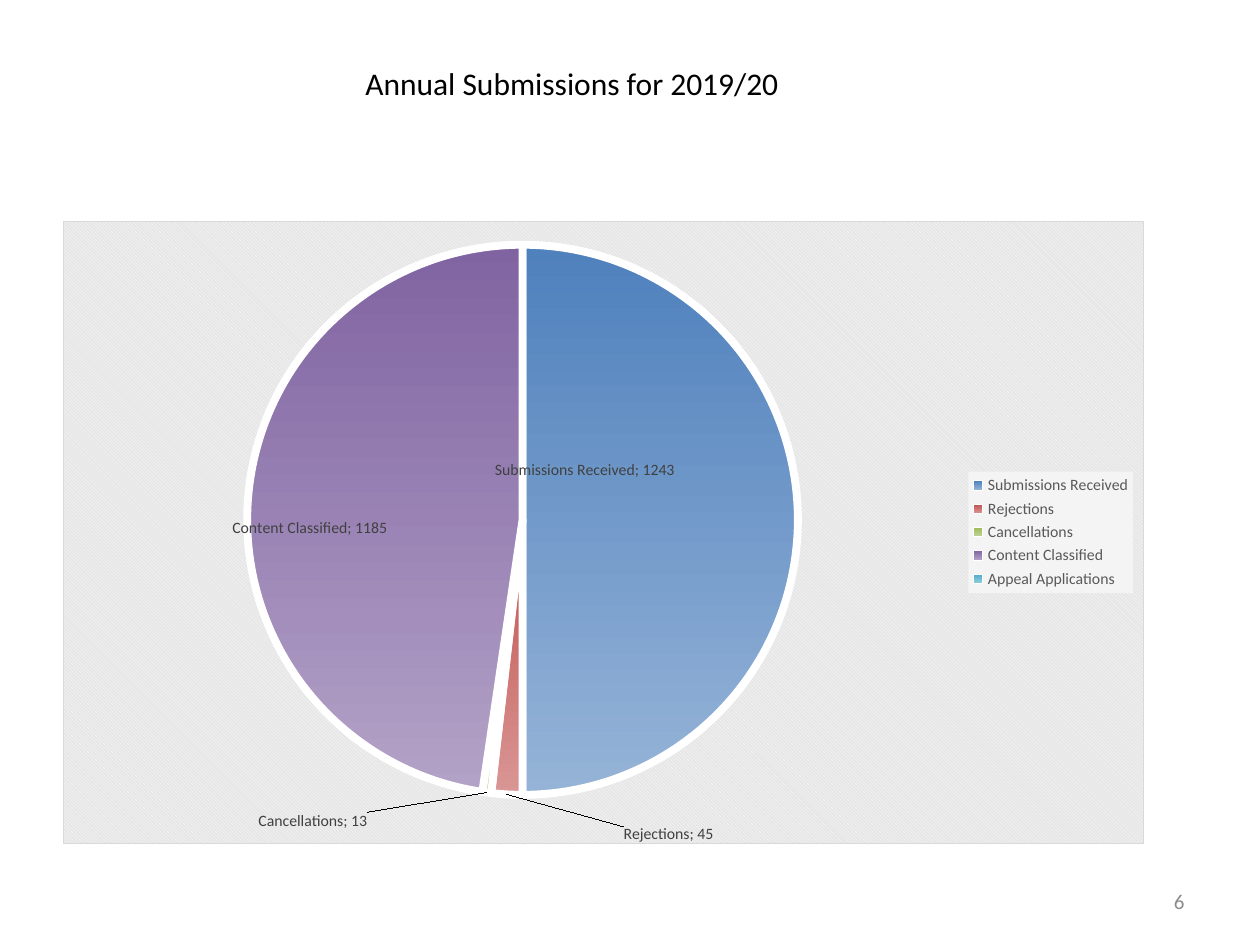
import pptx
import pptx.chart.data
import pptx.dml.color
import pptx.enum.chart
import pptx.enum.text
import pptx.oxml
import pptx.oxml.ns
import pptx.util

Inches = pptx.util.Inches
Pt = pptx.util.Pt
RGBColor = pptx.dml.color.RGBColor
Place = pptx.enum.chart.XL_LABEL_POSITION
Align = pptx.enum.text.PP_ALIGN

FONT = "Calibri"
BLACK = RGBColor(0x00, 0x00, 0x00)
WHITE = RGBColor(0xFF, 0xFF, 0xFF)
GRAY = RGBColor(0x8C, 0x8C, 0x8C)
LABEL = RGBColor(0x40, 0x40, 0x40)
LEGEND = RGBColor(0x59, 0x59, 0x59)
PANEL = RGBColor(0xF4, 0xF4, 0xF4)
BACK = RGBColor(0xE6, 0xE6, 0xE6)
EDGE = RGBColor(0xD9, 0xD9, 0xD9)

SLICES = [
    ("Submissions Received", 1243, "4F81BD", "95B3D7", Place.CENTER, (-0.07, -0.08)),
    ("Rejections", 45, "C0504D", "D99694", Place.OUTSIDE_END, (0.15, 0.04)),
    ("Cancellations", 13, "9BBB59", "C3D69B", Place.OUTSIDE_END, (-0.11, 0.02)),
    ("Content Classified", 1185, "8064A2", "B3A2C7", Place.CENTER, (-0.07, 0.03)),
    ("Appeal Applications", 0, "4BACC6", "93CDDD", None, None),
]


def parse(tag, body):
    """Return a chart element with the given content."""
    spaces = pptx.oxml.ns.nsdecls("c", "a")
    return pptx.oxml.parse_xml(f"<c:{tag} {spaces}>{body}</c:{tag}>")


def layout(x, y, size=None):
    """Return a manual layout, for the inner plot when a size is given."""
    inner = '<c:layoutTarget val="inner"/>' if size else ""
    mode = '<c:xMode val="edge"/><c:yMode val="edge"/>' if size else ""
    extent = f'<c:w val="{size[0]}"/><c:h val="{size[1]}"/>' if size else ""
    return parse("layout", f'<c:manualLayout>{inner}{mode}<c:x val="{x}"/>'
                           f'<c:y val="{y}"/>{extent}</c:manualLayout>')


def style(font, size, color):
    """Set the face, size and colour of a font."""
    font.name = FONT
    font.size = Pt(size)
    font.color.rgb = color


def add_title(slide, box):
    """Place the title in its box."""
    title = slide.shapes.title
    title.left, title.top, title.width, title.height = map(Inches, box)
    title.text_frame.text = "Annual Submissions for 2019/20"
    para = title.text_frame.paragraphs[0]
    para.alignment = Align.CENTER
    style(para.runs[0].font, 18, BLACK)


def add_number(slide, box):
    """Place the slide number in its box."""
    frame = slide.shapes.add_textbox(*map(Inches, box)).text_frame
    frame.word_wrap = True
    frame.vertical_anchor = pptx.enum.text.MSO_ANCHOR.MIDDLE
    frame.text = "6"
    para = frame.paragraphs[0]
    para.alignment = Align.RIGHT
    style(para.runs[0].font, 12, GRAY)


def paint(point, start, end):
    """Give a slice a downward gradient and a white outline."""
    fill = point.format.fill
    fill.gradient()
    fill.gradient_angle = 270
    for stop, color, spot in zip(fill.gradient_stops, (start, end), (0, 1)):
        stop.color.rgb = RGBColor.from_string(color)
        stop.position = spot
    point.format.line.color.rgb = WHITE
    point.format.line.width = Pt(4.5)


def add_labels(series):
    """Label the slices with category and value, moved from their default spots."""
    labels = series.data_labels
    labels.show_category_name = labels.show_value = True
    labels.show_percentage = False
    style(labels.font, 9, LABEL)
    for index, (*_, place, _) in enumerate(SLICES):
        label = series.points[index].data_label
        style(label.font, 9, LABEL)
        if place is not None:
            label.position = place
    root = labels._element
    for node, (*_, shift) in zip(root.xpath("c:dLbl"), SLICES):
        if shift is None:
            for child in list(node)[1:]:
                node.remove(child)
            node.append(pptx.oxml.parse_xml(
                f'<c:delete {pptx.oxml.ns.nsdecls("c")} val="1"/>'))
            continue
        for old in node.xpath("c:layout"):
            node.remove(old)
        node[0].addnext(layout(*shift))
        node.xpath("c:showCatName")[0].set("val", "1")
    for size in root.xpath(".//c:showBubbleSize"):
        size.addnext(parse("separator", "; "))
    for lead in root.xpath("c:showLeaderLines"):
        lead.set("val", "1")


def add_pie(slide, box):
    """Place the pie chart with its legend in its box."""
    data = pptx.chart.data.CategoryChartData()
    data.categories = [row[0] for row in SLICES]
    data.add_series("Series 1", [row[1] for row in SLICES])
    kind = pptx.enum.chart.XL_CHART_TYPE.PIE
    chart = slide.shapes.add_chart(kind, *map(Inches, box), data).chart
    chart.has_title = False
    style(chart.font, 10, BLACK)
    plot = chart.plots[0]
    plot.vary_by_categories = True
    series = plot.series[0]
    for index, row in enumerate(SLICES):
        paint(series.points[index], row[2], row[3])
    add_labels(series)

    chart.has_legend = True
    legend = chart.legend
    legend.position = pptx.enum.chart.XL_LEGEND_POSITION.RIGHT
    legend.include_in_layout = False
    style(legend.font, 9, LEGEND)
    legend._element.xpath("c:txPr")[0].addprevious(parse(
        "spPr", f'<a:solidFill><a:srgbClr val="{PANEL}"/></a:solidFill>'))

    root = chart._chartSpace
    area = root.xpath("c:chart/c:plotArea")[0]
    for old in area.xpath("c:layout"):
        area.remove(old)
    area.insert(0, layout(0.17, 0.03, (0.51, 0.9)))
    root.xpath("c:txPr")[0].addprevious(parse(
        "spPr",
        f'<a:pattFill prst="dkDnDiag"><a:fgClr><a:srgbClr val="{WHITE}"/></a:fgClr>'
        f'<a:bgClr><a:srgbClr val="{BACK}"/></a:bgClr></a:pattFill>'
        f'<a:ln w="{Pt(0.75)}"><a:solidFill><a:srgbClr val="{EDGE}"/></a:solidFill></a:ln>'))


def main():
    """Build the slide and save it."""
    deck = pptx.Presentation()
    deck.slide_width, deck.slide_height = Inches(10), Inches(7.5)
    slide = deck.slides.add_slide(deck.slide_layouts[5])
    add_title(slide, (0.5, 0.3, 8.08, 0.72))
    add_pie(slide, (0.5, 1.75, 8.58, 4.95))
    add_number(slide, (7.17, 6.95, 2.33, 0.4))
    deck.save("out.pptx")


if __name__ == "__main__":
    main()
